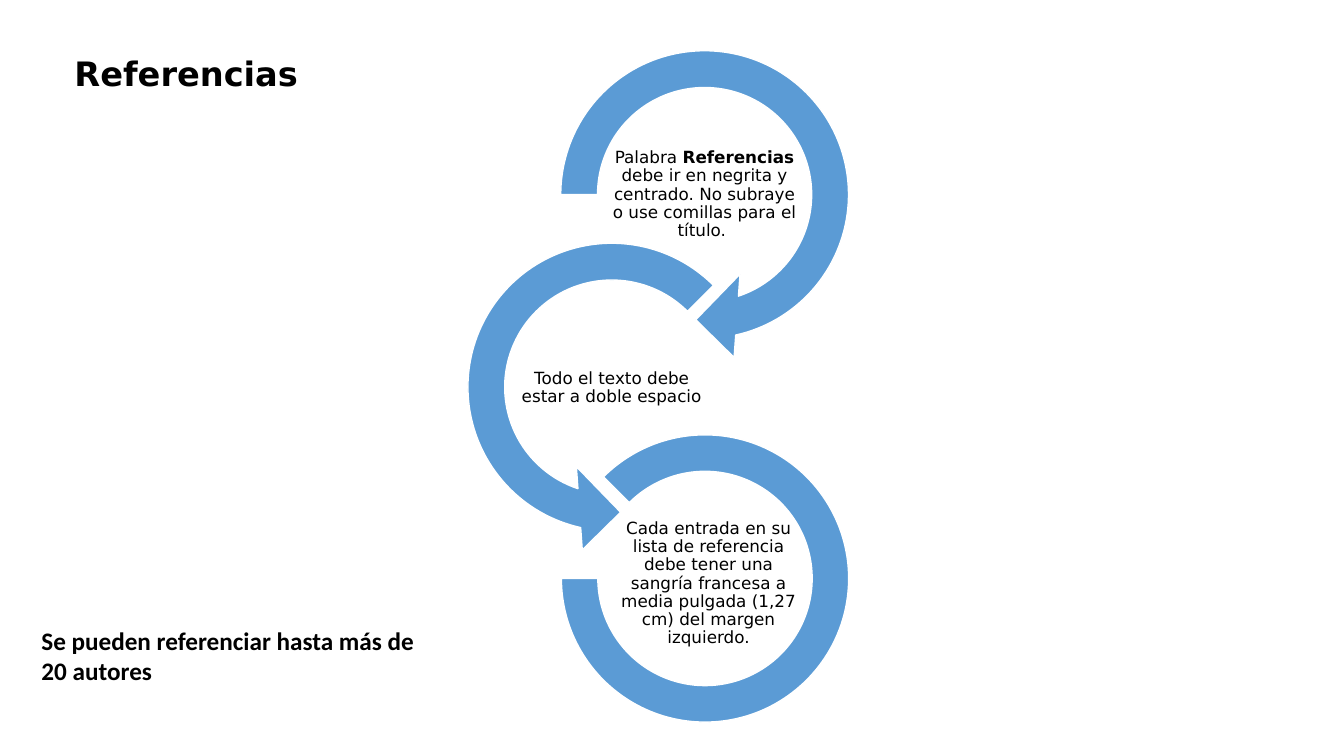
"""Build the slide about the reference list rules."""
import pptx
import pptx.dml.color
import pptx.enum.shapes
import pptx.enum.text
import pptx.util

Pt = pptx.util.Pt
MSO_SHAPE = pptx.enum.shapes.MSO_SHAPE
ALIGN = pptx.enum.text.PP_ALIGN
ANCHOR = pptx.enum.text.MSO_ANCHOR

COLORS = {"ring": "5B9BD5", "outline": "FFFFFF", "text": "000000"}
ARROW_SIZE = 239
ARC_SIZE = 205.2
LABEL_SIZE = (132.5, 66.2)

RULES = [
    {
        "kind": MSO_SHAPE.CIRCULAR_ARROW,
        "center": (503.3, 139),
        "size": ARROW_SIZE,
        "adjustments": (0.11, 11.423, 45, 108, 0.125),
        "label_center": (503.3, 139),
        "paragraph": [
            ("Palabra ", False),
            ("Referencias ", True),
            ("debe ir en negrita y centrado. No subraye o use comillas para el título. ", False),
        ],
    },
    {
        "kind": MSO_SHAPE.LEFT_CIRCULAR_ARROW,
        "center": (437, 276.5),
        "size": ARROW_SIZE,
        "adjustments": (0.11, 11.423, 63, 189, 0.125),
        "label_center": (437, 277.2),
        "paragraph": [("Todo el texto debe estar a doble espacio", False)],
    },
    {
        "kind": MSO_SHAPE.BLOCK_ARC,
        "center": (503.6, 413.2),
        "size": ARC_SIZE,
        "adjustments": (135, 108, 0.127),
        "label_center": (506.2, 416.9),
        "paragraph": [
            (
                "Cada entrada en su lista de referencia debe tener una sangría francesa "
                "a media pulgada (1,27 cm) del margen izquierdo.",
                False,
            )
        ],
    },
]


def rgb(name):
    """Return the named colour."""
    return pptx.dml.color.RGBColor.from_string(COLORS[name])


def centered_box(center, width, height):
    """Return left, top, width and height around a centre."""
    left, top = center[0] - width / 2, center[1] - height / 2
    return [Pt(length) for length in (left, top, width, height)]


def write_text(frame, paragraphs, font="DejaVu Sans", size=12, align=ALIGN.LEFT,
               anchor=ANCHOR.TOP, wrap=True, spacing=None, inset=None):
    """Fill a text frame with paragraphs of (text, bold) runs."""
    frame.word_wrap = wrap
    frame.vertical_anchor = anchor
    if inset is not None:
        frame.margin_left = frame.margin_right = Pt(inset)
        frame.margin_top = frame.margin_bottom = Pt(inset)
    for index, runs in enumerate(paragraphs):
        paragraph = frame.add_paragraph() if index else frame.paragraphs[0]
        paragraph.alignment = align
        paragraph.line_spacing = spacing
        for text, bold in runs:
            run = paragraph.add_run()
            run.text = text
            run.font.name = font
            run.font.size = Pt(size)
            run.font.bold = bold
            run.font.color.rgb = rgb("text")


def add_ring(slide, rule):
    """Draw the arrow or arc that surrounds a rule."""
    ring = slide.shapes.add_shape(
        rule["kind"], *centered_box(rule["center"], rule["size"], rule["size"]))
    for index, value in enumerate(rule["adjustments"]):
        ring.adjustments[index] = value
    ring.shadow.inherit = False
    ring.fill.solid()
    ring.fill.fore_color.rgb = rgb("ring")
    ring.line.color.rgb = rgb("outline")
    ring.line.width = Pt(1)


def add_label(slide, rule):
    """Write the wording of a rule inside its ring."""
    label = slide.shapes.add_textbox(*centered_box(rule["label_center"], *LABEL_SIZE))
    write_text(label.text_frame, [rule["paragraph"]], align=ALIGN.CENTER,
               anchor=ANCHOR.MIDDLE, spacing=0.9, inset=0.7)


def add_title(slide):
    """Place and format the slide title."""
    title = slide.shapes.title
    title.left, title.top, title.width, title.height = Pt(46), Pt(34), Pt(190), Pt(36)
    write_text(title.text_frame, [[("Referencias", True)]], size=24)


def add_author_note(slide):
    """Write the note on the number of authors."""
    note = slide.shapes.add_textbox(Pt(22.5), Pt(443), Pt(287), Pt(51))
    lines = ["Se pueden referenciar hasta más de", "20 autores"]
    write_text(note.text_frame, [[(line, True)] for line in lines],
               font="Calibri", size=18, wrap=False)


def main():
    """Build and save the presentation."""
    presentation = pptx.Presentation()
    presentation.slide_width, presentation.slide_height = Pt(960), Pt(540)
    slide = presentation.slides.add_slide(presentation.slide_layouts.get_by_name("Title Only"))
    add_title(slide)
    for rule in RULES:
        add_ring(slide, rule)
        add_label(slide, rule)
    add_author_note(slide)
    presentation.save("out.pptx")


if __name__ == "__main__":
    main()
